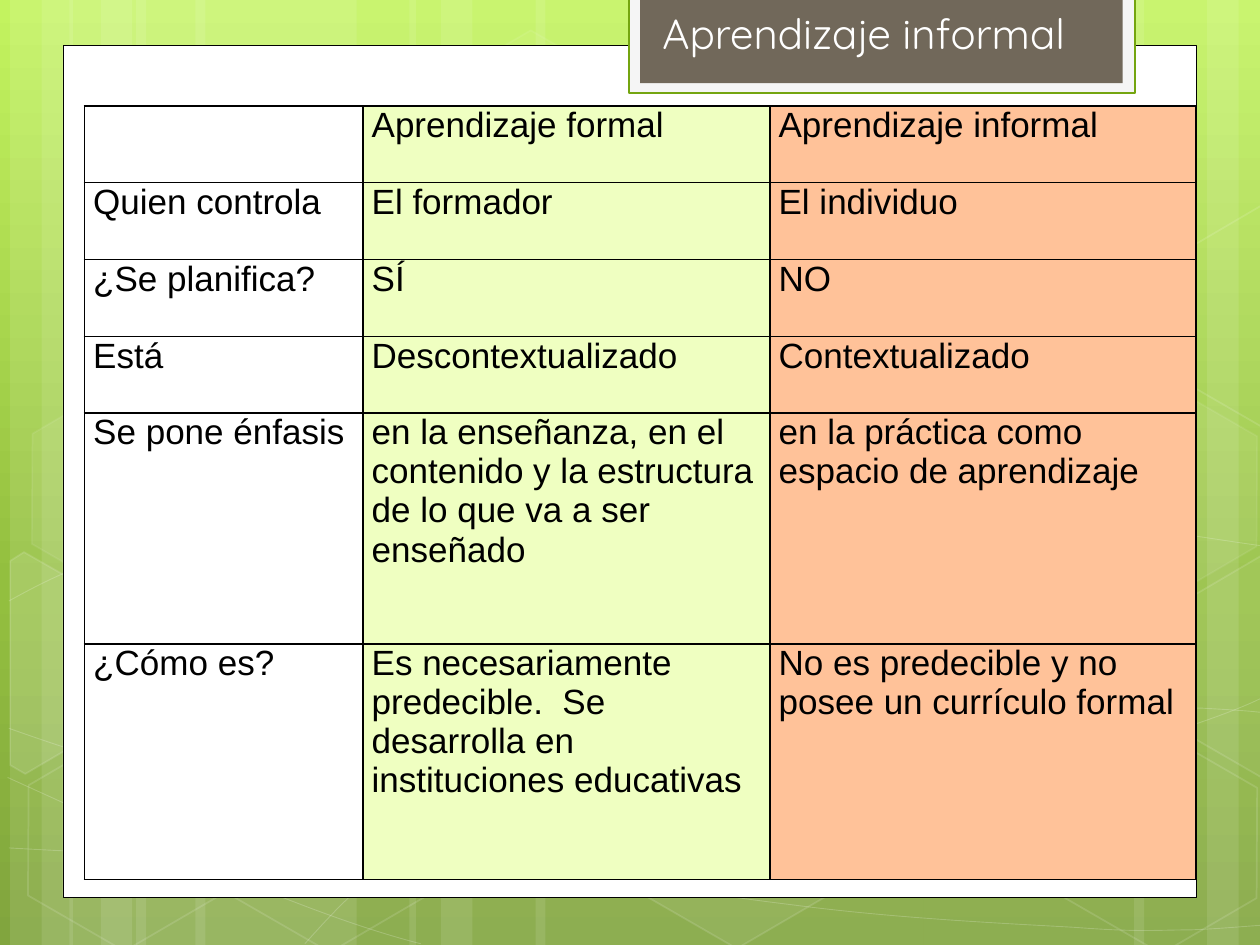
from copy import deepcopy
from math import cos, radians, sin
from pptx import Presentation
from pptx.dml.color import RGBColor
from pptx.enum.shapes import MSO_SHAPE as Shape
from pptx.enum.text import MSO_AUTO_SIZE as AutoSize
from pptx.oxml import parse_xml
from pptx.oxml.ns import nsdecls, qn
from pptx.util import Inches, Pt

COLORS = {
    "white": "FFFFFF", "black": "000000", "paper": "F5F5F5", "green": "74A510",
    "brown": "71685A", "formal": "EFFFC1", "informal": "FFC299",
    "sky": "C3F35F", "leaf": "93BF3F", "moss": "81A53E",
}
BANDS = [
    (1.08, 1.75, 0), (0.08, 0.5, 0), (0.33, 0.83, 0), (1.55, 1.75, 0), (0.55, 0.5, 0),
    (0.8, 0.83, 0), (7.33, 1.75, 180), (9.58, 0.5, 180), (9, 0.83, 180), (4.25, 3.08, 0),
    (3.25, 0.5, 0), (3.5, 0.83, 0),
]
CURVES = [
    [(0.07, 6.73), (0.61, 6.76), (1.15, 6.79), (1.9, 6.78), (2.65, 6.77), (3.58, 6.75),
     (4.58, 6.65), (5.58, 6.55), (7, 6.36), (7.92, 6.17), (8.83, 5.98), (9.77, 5.68),
     (10.07, 5.51)],
    [(0.07, 4.77), (0.36, 4.61), (0.65, 4.46), (1.21, 4.31), (1.78, 4.16), (2.59, 3.94),
     (3.47, 3.87), (4.36, 3.8), (5.44, 3.79), (6.54, 3.87), (7.64, 3.95), (9.47, 4.26),
     (10.07, 4.34)],
    [(0.06, 6.17), (1.27, 6.72), (2.47, 7.27), (3.34, 7.49)],
    [(0.07, 5.78), (0.38, 5.89), (0.7, 6), (1.28, 6.16), (1.86, 6.31), (2.73, 6.56),
     (3.57, 6.73), (4.4, 6.9), (5.45, 7.08), (6.28, 7.18), (7.11, 7.29), (8, 7.33),
     (8.53, 7.36), (9.05, 7.4), (9.19, 7.38), (9.45, 7.38), (9.71, 7.37), (9.89, 7.35),
     (10.07, 7.34)],
    [(2.42, 7.49), (2.6, 7.29), (2.78, 7.09), (3.02, 6.91), (3.26, 6.73), (3.6, 6.53),
     (3.88, 6.39), (4.16, 6.25), (4.33, 6.19), (4.7, 6.09), (5.06, 5.99), (5.73, 5.85),
     (6.08, 5.78), (6.44, 5.71), (6.49, 5.71), (6.8, 5.69), (7.11, 5.66), (7.6, 5.63),
     (7.94, 5.62), (8.29, 5.61), (8.86, 5.62), (8.86, 5.62), (9.08, 5.62), (9.3, 5.62),
     (9.53, 5.62), (9.71, 5.63), (9.88, 5.64), (9.97, 5.65), (10.06, 5.66), (10.03, 5.65),
     (10.06, 5.66)],
]
HEXAGONS = [
    (3.34, 0.36, 4, 8), (4.97, 5.89, 6, 12), (0.11, 5.91, 0, 12), (0.14, 3.12, 7, 8),
    (1.74, 5.92, 0, 12), (7.53, 4.53, 10, 12), (8.34, 5.93, 0, 12), (8.34, 3.14, 7, 8),
]
CUT_HEXAGONS = [
    ((0.36, 5.35), 10,
     [(0.08, 4.45), (0.19, 4.38), (0.96, 4.82), (0.95, 5.7), (0.2, 6.14), (0.08, 6.07)]),
    ((9.85, 5.2), 4,
     [(9.26, 4.85), (10.01, 4.41), (10.09, 4.46), (10.09, 6.13), (10.02, 6.17), (9.26, 5.73)]),
    ((9.85, 2.41), 0,
     [(9.26, 2.07), (10.01, 1.63), (10.1, 1.68), (10.09, 3.35), (10.02, 3.39), (9.26, 2.95)]),
]
ROWS = [
    ("", "Aprendizaje formal", "Aprendizaje informal"),
    ("Quien controla", "El formador", "El individuo"),
    ("¿Se planifica?", "SÍ", "NO"),
    ("Está", "Descontextualizado", "Contextualizado"),
    ("Se pone énfasis",
     "en la enseñanza, en el contenido y la estructura de lo que va a ser enseñado",
     "en la práctica como espacio de aprendizaje"),
    ("¿Cómo es?",
     "Es necesariamente predecible.  Se desarrolla en instituciones educativas",
     "No es predecible y no posee un currículo formal"),
]


def rgb(name):
    return RGBColor.from_string(COLORS[name])


def turn(points, center, degrees):
    cx, cy = center
    c, s = cos(radians(degrees)), sin(radians(degrees))
    return [(cx + (x - cx) * c - (y - cy) * s, cy + (x - cx) * s + (y - cy) * c)
            for x, y in points]


class Deck:
    def __init__(self, s):
        self.s = s
        self.body_font = "Arial"
        self.title_font = "Quicksand"

    def background(self, stops):
        fill = self.s.background.fill
        fill.gradient()
        fill.gradient_angle = 270
        first = fill.gradient_stops[0]._gs
        first.addnext(deepcopy(first))
        for stop, (position, color) in zip(fill.gradient_stops, stops):
            stop.position = position
            stop.color.rgb = rgb(color)

    def paint(self, fill, color, alpha):
        if not alpha:
            fill.background()
            return
        fill.solid()
        fill.fore_color.rgb = rgb(color)
        if alpha < 100:
            tag = fill._xPr.find(".//" + qn("a:srgbClr"))
            tag.append(parse_xml(f'<a:alpha {nsdecls("a")} val="{alpha * 1000}"/>'))

    def style(self, sp, color="white", alpha=100, line="white", width=0, line_alpha=100):
        sp.shadow.inherit = False
        self.paint(sp.fill, color, alpha)
        self.paint(sp.line.fill, line, line_alpha if width else 0)
        if width:
            sp.line.width = Pt(width)

    def shape(self, kind, x, y, w, h, rotation=0, **look):
        sp = self.s.shapes.add_shape(kind, Inches(x), Inches(y), Inches(w), Inches(h))
        sp.rotation = rotation
        self.style(sp, **look)
        return sp

    def hexagon(self, x, y, **look):
        sp = self.shape(Shape.HEXAGON, x, y, 1.75, 1.52, rotation=30, width=1, **look)
        sp.adjustments[0] = 0.285

    def outline(self, points, close, **look):
        pts = [(Inches(x), Inches(y)) for x, y in points]
        builder = self.s.shapes.build_freeform(*pts[0])
        builder.add_line_segments(pts[1:], close=close)
        sp = builder.convert_to_shape()
        self.style(sp, **look)
        return sp

    def curve(self, points, **look):
        sp = self.outline(points, False, alpha=0, **look)
        lines = list(sp._element.iter(qn("a:lnTo")))
        for i in range(0, len(lines), 3):
            bend = parse_xml(f'<a:cubicBezTo {nsdecls("a")}/>')
            lines[i].addprevious(bend)
            for line in lines[i:i + 3]:
                bend.append(line[0])
                line.getparent().remove(line)

    def cut_hexagon(self, points, center, **look):
        sp = self.outline(turn(points, center, -30), True, width=1, **look)
        sp.rotation = 30

    def text(self, words, x, y, w, h, size, color):
        tf = self.s.shapes.add_textbox(Inches(x), Inches(y), Inches(w), Inches(h)).text_frame
        tf.word_wrap = True
        tf.auto_size = AutoSize.SHAPE_TO_FIT_TEXT
        p = tf.paragraphs[0]
        p.text = words
        self.font(p, self.title_font, size, color)

    def font(self, p, name, size, color):
        p.font.name = name
        p.font.size = Pt(size)
        p.font.color.rgb = rgb(color)

    def cell(self, cell, words, color):
        cell.margin_left = cell.margin_right = Inches(0.07)
        cell.margin_top = cell.margin_bottom = 0
        p = cell.text_frame.paragraphs[0]
        p.text = words
        p.space_before = p.space_after = Pt(5)
        self.font(p, self.body_font, 20, "black")
        props = cell._tc.get_or_add_tcPr()
        for side in ("lnL", "lnR", "lnT", "lnB"):
            props.append(parse_xml(
                f'<a:{side} {nsdecls("a")} w="12700"><a:solidFill>'
                f'<a:srgbClr val="{COLORS["black"]}"/></a:solidFill></a:{side}>'))
        self.paint(cell.fill, color, 100 if color else 0)

    def table(self, rows, x, y, widths, heights, fills):
        table = self.s.shapes.add_table(len(rows), len(widths), Inches(x), Inches(y),
                                        Inches(sum(widths)), Inches(sum(heights))).table
        table.first_row = table.horz_banding = False
        for column, width in zip(table.columns, widths):
            column.width = Inches(width)
        for r, (row, height) in enumerate(zip(rows, heights)):
            table.rows[r].height = Inches(height)
            for c, words in enumerate(row):
                self.cell(table.cell(r, c), words, fills[c])


def main():
    prs = Presentation()
    prs.slide_width, prs.slide_height = Inches(10), Inches(7.5)
    deck = Deck(prs.slides.add_slide(prs.slide_layouts[6]))
    deck.background([(0, "sky"), (0.62, "leaf"), (1, "moss")])
    for x, width, rotation in BANDS:
        deck.shape(Shape.RECTANGLE, x, 0, width, 7.5, rotation=rotation, alpha=10)
    for points in CURVES:
        deck.curve(points, width=0.5, line_alpha=20)
    for x, y, alpha, line_alpha in HEXAGONS:
        deck.hexagon(x, y, alpha=alpha, line_alpha=line_alpha)
    for center, alpha, points in CUT_HEXAGONS:
        deck.cut_hexagon(points, center, alpha=alpha, line_alpha=12)
    deck.shape(Shape.RECTANGLE, 0.5, 0.36, 9, 6.76, line="black", width=0.5)
    deck.shape(Shape.RECTANGLE, 4.99, -0.02, 4.02, 0.76, color="paper", line="green", width=1.25)
    deck.shape(Shape.RECTANGLE, 5.08, -0.02, 3.83, 0.68, color="brown")
    deck.table(ROWS, 0.67, 0.84, [2.21, 3.23, 3.38], [0.61] * 4 + [1.83, 1.87],
               [None, "formal", "informal"])
    deck.text("Aprendizaje informal", 5.16, 0.01, 3.54, 0.5, 24, "white")
    prs.save("out.pptx")


if __name__ == "__main__":
    main()
